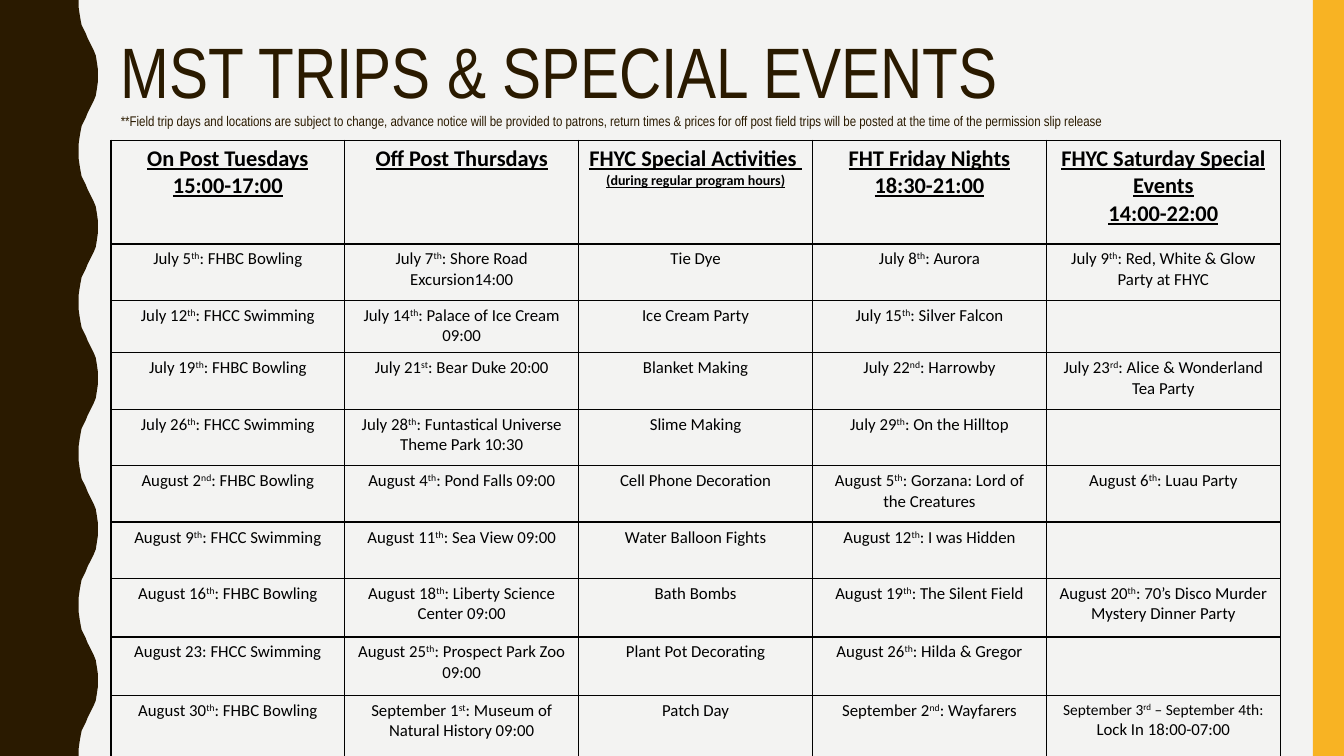
from dataclasses import dataclass

from lxml import etree
from pptx import Presentation
from pptx.dml.color import RGBColor
from pptx.enum.shapes import MSO_SHAPE
from pptx.enum.text import MSO_ANCHOR, PP_ALIGN
from pptx.oxml.ns import qn
from pptx.util import Inches, Pt

RECTANGLE = MSO_SHAPE.RECTANGLE
CENTER = PP_ALIGN.CENTER
TOP = MSO_ANCHOR.TOP


@dataclass(frozen=True)
class Theme:
    background: str = "F3F3F2"
    brown: str = "2A1A00"
    gold: str = "F8B323"
    black: str = "000000"
    title_font: str = "Arial Narrow"
    table_font: str = "Calibri"
    title_size: int = 51
    note_size: int = 10
    heading_size: int = 16
    body_size: int = 12
    compact_size: int = 11
    border_width: int = 1


THEME = Theme()

# One half of a wave: distance down the edge, distance from the left
WAVE_HALF = [(0, 0.78), (0.07, 0.78), (0.14, 0.79), (0.2, 0.8), (0.25, 0.81),
             (0.29, 0.83), (0.33, 0.85), (0.38, 0.87), (0.42, 0.89), (0.46, 0.91),
             (0.5, 0.93), (0.55, 0.95), (0.61, 0.96), (0.68, 0.97), (0.75, 0.97)]
WAVE_LENGTH = 1.5
WAVE_COUNT = 5

TITLE = "MST TRIPS & SPECIAL EVENTS"
NOTE = ("**Field trip days and locations are subject to change, advance notice will be "
        "provided to patrons, return times & prices for off post field trips will be "
        "posted at the time of the permission slip release")

# Each heading is a list of (text, size) lines
HEADINGS = [
    [("On Post Tuesdays", THEME.heading_size), ("15:00-17:00", THEME.heading_size)],
    [("Off Post Thursdays", THEME.heading_size)],
    [("FHYC Special Activities ", THEME.heading_size),
     ("(during regular program hours)", THEME.note_size)],
    [("FHT Friday Nights", THEME.heading_size), ("18:30-21:00", THEME.heading_size)],
    [("FHYC Saturday Special Events", THEME.heading_size),
     ("14:00-22:00", THEME.heading_size)],
]

# ^ encloses a superscript; text before | is set in the compact size
EVENTS = [
    ["July 5^th^: FHBC Bowling", "July 7^th^: Shore Road Excursion14:00", "Tie Dye",
     "July 8^th^: Aurora", "July 9^th^: Red, White & Glow Party at FHYC"],
    ["July 12^th^: FHCC Swimming", "July 14^th^: Palace of Ice Cream 09:00",
     "Ice Cream Party", "July 15^th^: Silver Falcon", ""],
    ["July 19^th^: FHBC Bowling", "July 21^st^: Bear Duke 20:00", "Blanket Making",
     "July 22^nd^: Harrowby", "July 23^rd^: Alice & Wonderland Tea Party"],
    ["July 26^th^: FHCC Swimming", "July 28^th^: Funtastical Universe Theme Park 10:30",
     "Slime Making", "July 29^th^: On the Hilltop", ""],
    ["August 2^nd^: FHBC Bowling", "August 4^th^: Pond Falls 09:00",
     "Cell Phone Decoration", "August 5^th^: Gorzana: Lord of the Creatures",
     "August 6^th^: Luau Party"],
    ["August 9^th^: FHCC Swimming", "August 11^th^: Sea View 09:00",
     "Water Balloon Fights", "August 12^th^: I was Hidden", ""],
    ["August 16^th^: FHBC Bowling", "August 18^th^: Liberty Science Center 09:00",
     "Bath Bombs", "August 19^th^: The Silent Field",
     "August 20^th^: 70’s Disco Murder Mystery Dinner Party"],
    ["August 23: FHCC Swimming", "August 25^th^: Prospect Park Zoo 09:00",
     "Plant Pot Decorating", "August 26^th^: Hilda & Gregor", ""],
    ["August 30^th^: FHBC Bowling", "September 1^st^: Museum of Natural History 09:00",
     "Patch Day", "September 2^nd^: Wayfarers",
     "September 3^rd^ – September 4th: |Lock In 18:00-07:00"],
]
ROW_HEIGHTS = [1.03, 0.56, 0.52, 0.56, 0.56, 0.56, 0.56, 0.58, 0.58, 0.66]


def paint(shape, color):
    shape.shadow.inherit = False
    shape.fill.solid()
    shape.fill.fore_color.rgb = RGBColor.from_string(color)
    shape.line.fill.background()


def add_run(paragraph, text, font_name, size, color):
    run = paragraph.add_run()
    run.text = text
    run.font.name = font_name
    run.font.size = Pt(size)
    run.font.color.rgb = RGBColor.from_string(color)
    return run


def add_wave(slide, left, top):
    """Dark band on the left with a wavy right edge."""
    edge = []
    for wave in range(WAVE_COUNT):
        start = top + wave * WAVE_LENGTH
        edge += [(left + x, start + y) for y, x in WAVE_HALF]
        edge += [(left + x, start + WAVE_LENGTH - y) for y, x in reversed(WAVE_HALF[:-1])]
    outline = edge + [(left, top + WAVE_COUNT * WAVE_LENGTH)]
    builder = slide.shapes.build_freeform(Inches(left), Inches(top))
    builder.add_line_segments([(Inches(x), Inches(y)) for x, y in outline], close=True)
    paint(builder.convert_to_shape(), THEME.brown)


def add_side_bar(slide, left, top, width, height):
    bar = slide.shapes.add_shape(
        RECTANGLE, Inches(left), Inches(top), Inches(width), Inches(height))
    paint(bar, THEME.gold)


def add_title(slide, left, top, width, height):
    """Large title with the small note beneath it."""
    box = slide.shapes.add_textbox(
        Inches(left), Inches(top), Inches(width), Inches(height))
    frame = box.text_frame
    frame.word_wrap = True
    frame.vertical_anchor = TOP
    lines = [(TITLE, THEME.title_size), (NOTE, THEME.note_size)]
    for index, (text, size) in enumerate(lines):
        paragraph = frame.add_paragraph() if index else frame.paragraphs[0]
        paragraph.line_spacing = 0.9
        add_run(paragraph, text, THEME.title_font, size, THEME.brown)


def style_cell(cell):
    """Clear the fill and draw all four borders."""
    properties = cell._tc.get_or_add_tcPr()
    for side in ("a:lnL", "a:lnR", "a:lnT", "a:lnB"):
        line = etree.SubElement(properties, qn(side), w=str(Pt(THEME.border_width)))
        fill = etree.SubElement(line, qn("a:solidFill"))
        etree.SubElement(fill, qn("a:srgbClr"), val=THEME.black)
    cell.fill.background()


def write_heading(cell, lines):
    for index, (text, size) in enumerate(lines):
        paragraph = cell.text_frame.add_paragraph() if index else cell.text_frame.paragraphs[0]
        paragraph.alignment = CENTER
        run = add_run(paragraph, text, THEME.table_font, size, THEME.black)
        run.font.bold = True
        run.font.underline = True


def write_event(cell, event):
    paragraph = cell.text_frame.paragraphs[0]
    paragraph.alignment = CENTER
    *compact_parts, body_part = event.split("|")
    parts = [(part, THEME.compact_size) for part in compact_parts]
    parts.append((body_part, THEME.body_size))
    for part, size in parts:
        for index, text in enumerate(part.split("^")):
            if text:
                run = add_run(paragraph, text, THEME.table_font, size, THEME.black)
                if index % 2:
                    run.font._element.set("baseline", "30000")


def add_schedule(slide, left, top, width):
    frame = slide.shapes.add_table(
        len(ROW_HEIGHTS), len(HEADINGS), Inches(left), Inches(top),
        Inches(width), Inches(sum(ROW_HEIGHTS)))
    table = frame.table
    table.first_row = False
    table.horz_banding = False
    for row, height in zip(table.rows, ROW_HEIGHTS):
        row.height = Inches(height)
    for cell in table.iter_cells():
        style_cell(cell)
    for column, lines in enumerate(HEADINGS):
        write_heading(table.cell(0, column), lines)
    for row, events in enumerate(EVENTS, start=1):
        for column, event in enumerate(events):
            write_event(table.cell(row, column), event)


def build_events_slide(presentation):
    slide = presentation.slides.add_slide(presentation.slide_layouts[6])
    slide.background.fill.solid()
    slide.background.fill.fore_color.rgb = RGBColor.from_string(THEME.background)
    add_wave(slide, 0, 0)
    add_side_bar(slide, 13.02, 0, 0.31, 7.5)
    add_title(slide, 1.1, 0.32, 11.13, 1.63)
    add_schedule(slide, 1.1, 1.39, 11.6)


def main():
    presentation = Presentation()
    presentation.slide_width = Inches(13.33)
    presentation.slide_height = Inches(7.5)
    build_events_slide(presentation)
    presentation.save("out.pptx")


if __name__ == "__main__":
    main()
